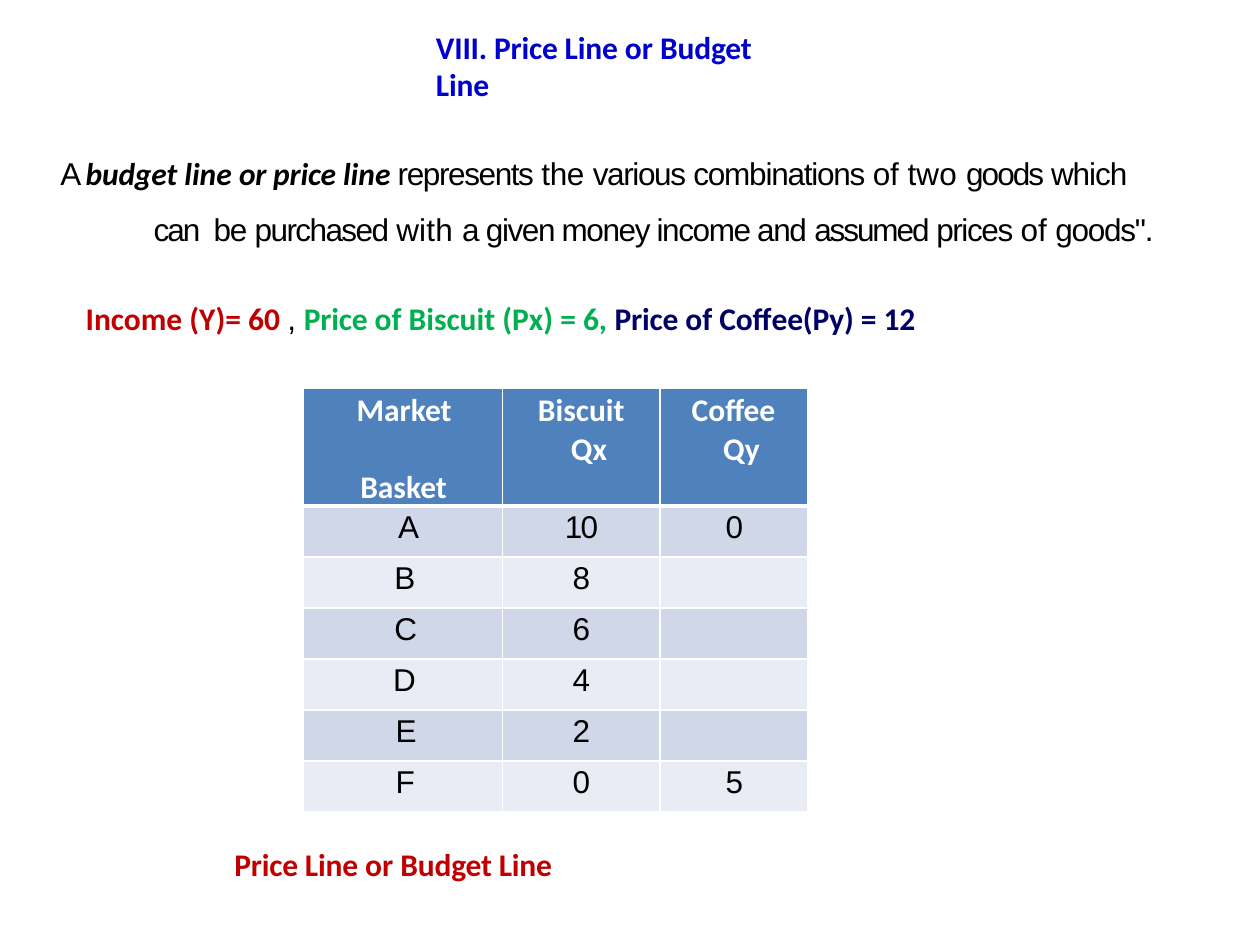
from lxml import etree
from pptx import Presentation
from pptx.dml.color import RGBColor
from pptx.enum.text import MSO_ANCHOR, MSO_AUTO_SIZE as AutoSize, PP_ALIGN as Align
from pptx.oxml.ns import qn
from pptx.util import Inches, Pt

RED, BLACK, GREEN, NAVY, BLUE, WHITE = "C00000", "000000", "00AF50", "000066", "0000CC", "FFFFFF"


def add_para(frame, spans, left=0, first=0, before=0, align=Align.LEFT, new=False):
    """Fill the first or a new paragraph; a span is (text, font, colour, style, spacing)."""
    para = frame.add_paragraph() if new else frame.paragraphs[0]
    para.alignment, para.space_before = align, Pt(before)
    props = para._p.get_or_add_pPr()
    props.set("marL", str(Inches(left)))
    props.set("indent", str(Inches(first)))
    for text, font, color, style, spacing in spans:
        span = para.add_run()
        span.text = text
        span.font.name, span.font.size = font, Pt(18)
        span.font.bold, span.font.italic = "b" in style, "i" in style
        span.font.color.rgb = RGBColor.from_string(color)
        span._r.get_or_add_rPr().set("spc", str(round(spacing * 100)))
    return para


def prepare_box(box, left, top, width, height):
    """Place a text shape and give it tight margins."""
    box.left, box.top, box.width, box.height = map(Inches, (left, top, width, height))
    frame = box.text_frame
    frame.word_wrap, frame.auto_size = True, AutoSize.SHAPE_TO_FIT_TEXT
    frame.vertical_anchor = MSO_ANCHOR.TOP
    frame.margin_left = frame.margin_right = frame.margin_bottom = 0
    frame.margin_top = Inches(0.01)
    return frame


deck = Presentation()
deck.slide_width, deck.slide_height = Inches(10), Inches(7.5)
page = deck.slides.add_slide(deck.slide_layouts[5])

# Title
title = prepare_box(page.shapes.title, 3.45, 0.21, 3.01, 0.33)
para = add_para(title, [("VIII. Price Line ", "Calibri", BLUE, "b", -0.1),
                        ("or ", "Calibri", BLUE, "b", 0),
                        ("Budget ", "Calibri", BLUE, "b", -0.1)], left=0.01, before=1)
para.add_line_break()
add_para(title, [("Line", "Calibri", BLUE, "b", -0.1)], left=0.01, before=1)

# Definition and given values
body = prepare_box(page.shapes.add_textbox(0, 0, 0, 0), 0.47, 1.06, 8.89, 1.63)
term = [("budget ", -0.1), ("line ", 0), ("or price ", -0.1), ("line ", 0)]
meaning = [("represents ", -0.8), ("the ", -0.2), ("various ", -0.8), ("combinations ", -0.7),
           ("of ", -0.1), ("two ", 0.1), ("goods ", -1.1), ("which ", -0.6), ("can", -1.2),
           (" ", 2.6), ("be ", -0.8), ("purchased ", -0.9), ("with ", 0.1), ("a ", -1.4),
           ("given money income and ", -0.8), ("assumed ", -1.2), ("prices ", -0.8),
           ("of ", -0.1), ('goods".', -0.7)]
definition = [("A ", "Arial", BLACK, "", -1.6)]
definition += [(text, "Calibri", BLACK, "bi", spacing) for text, spacing in term]
definition += [(text, "Arial", BLACK, "", spacing) for text, spacing in meaning]
add_para(body, definition, left=0.75, first=-0.74, before=1).line_spacing = 1.5
add_para(body, [("Income (Y)= 60 ", "Calibri", RED, "b", 0),
                (", ", "Arial", BLACK, "", -0.6),
                ("Price ", "Calibri", GREEN, "b", -0.1),
                ("of Biscuit (Px) = 6, ", "Calibri", GREEN, "b", 0),
                ("Price ", "Calibri", NAVY, "b", -0.1),
                ("of ", "Calibri", NAVY, "b", 0),
                ("Coffee(Py) ", "Calibri", NAVY, "b", -0.1),
                ("= ", "Calibri", NAVY, "b", 0),
                ("12", "Calibri", NAVY, "b", -0.1)], left=0.21, before=29, new=True)

# Market basket table
# Each header line: text, indent, space before
headers = [[("Market", 0.42, 2.5), ("Basket", 0.45, 22)],
           [("Biscuit", 0.28, 2.5), ("Qx", 0.54, 0)],
           [("Coffee", 0.25, 2.5), ("Qy", 0.5, 0)]]
baskets = [("A", "10", "0"), ("B", "8", ""), ("C", "6", ""),
           ("D", "4", ""), ("E", "2", ""), ("F", "0", "5")]
basket_indents = [0.75, 0.72, 0.72, 0.71, 0.73, 0.73]

table = page.shapes.add_table(7, 3, Inches(2.41), Inches(3.08), Inches(4), Inches(3.13)).table
for column, width in zip(table.columns, (1.58, 1.25, 1.17)):
    column.width = Inches(width)
for index, row in enumerate(table.rows):
    row.height = Inches(0.7 if index == 0 else (3.13 - 0.7) / 6)
    for col, cell in enumerate(row.cells):
        cell.margin_left = cell.margin_right = cell.margin_bottom = 0
        cell.margin_top = Inches(0.03)
        thick_side = {0: "lnB", 1: "lnT"}.get(index)
        for side in ("lnL", "lnR", "lnT", "lnB"):
            border = etree.SubElement(cell._tc.get_or_add_tcPr(), qn(f"a:{side}"),
                                      w=str(Pt(3 if side == thick_side else 1)))
            fill = etree.SubElement(border, qn("a:solidFill"))
            etree.SubElement(fill, qn("a:srgbClr"), val=WHITE)
        cell.fill.solid()
        shade = "4F81BC" if index == 0 else ("E9ECF4", "D0D7E8")[index % 2]
        cell.fill.fore_color.rgb = RGBColor.from_string(shade)
        if index == 0:
            for line, (text, indent, before) in enumerate(headers[col]):
                add_para(cell.text_frame, [(text, "Calibri", WHITE, "b", 0)],
                         left=indent, before=before, new=line > 0)
        elif baskets[index - 1][col]:
            text = baskets[index - 1][col]
            add_para(cell.text_frame,
                     [(text, "Arial", BLACK, "", -0.9 if text == "10" else 0)],
                     left=(basket_indents[index - 1], 0, 0.52)[col], before=2.5,
                     align=Align.CENTER if col == 1 else Align.LEFT)

# Caption
caption = prepare_box(page.shapes.add_textbox(0, 0, 0, 0), 1.85, 6.7, 2.58, 0.33)
add_para(caption, [("Price Line ", "Calibri", RED, "b", -0.1),
                   ("or ", "Calibri", RED, "b", 0),
                   ("Budget Line", "Calibri", RED, "b", -0.1)], left=0.01, before=1)

deck.save("out.pptx")
